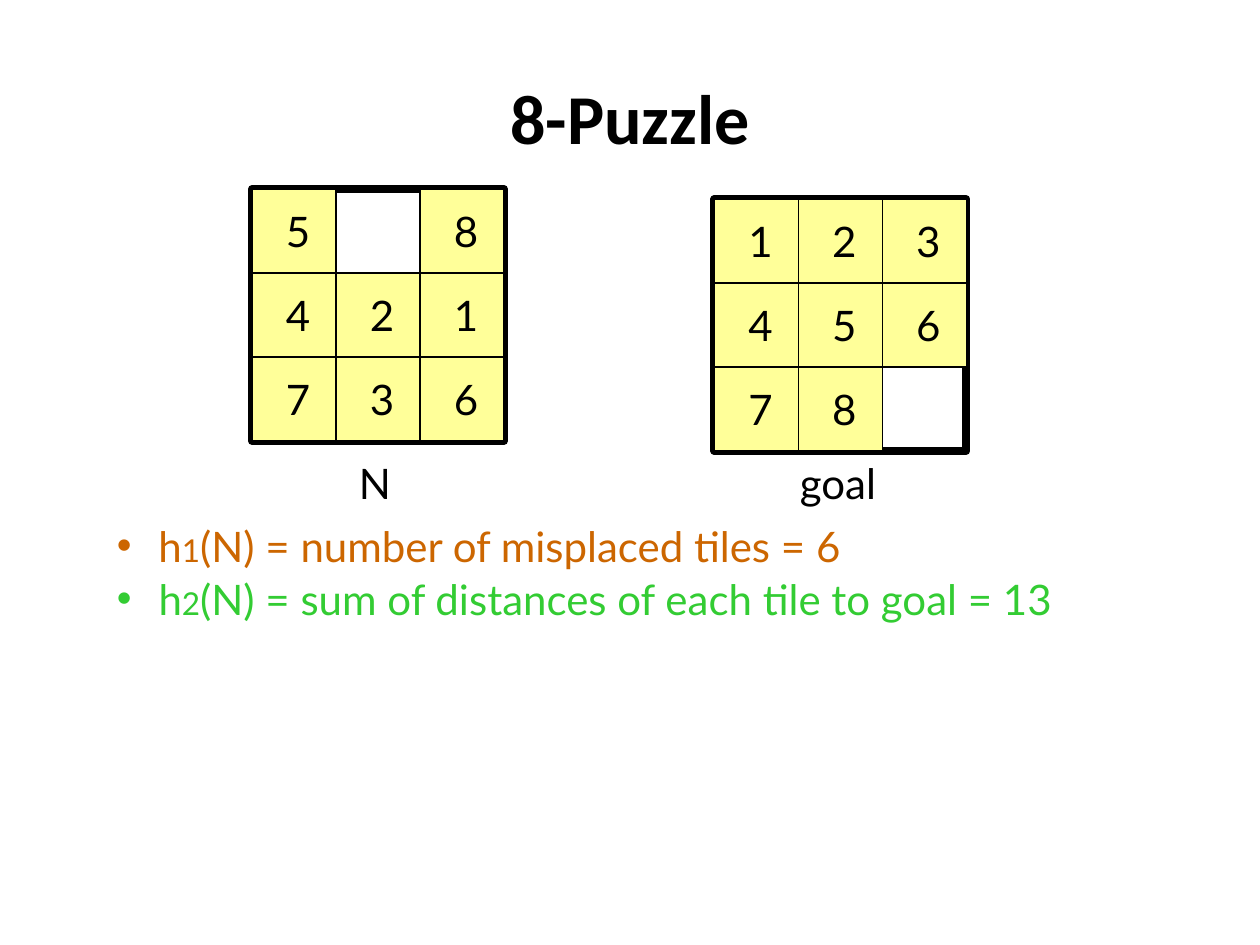
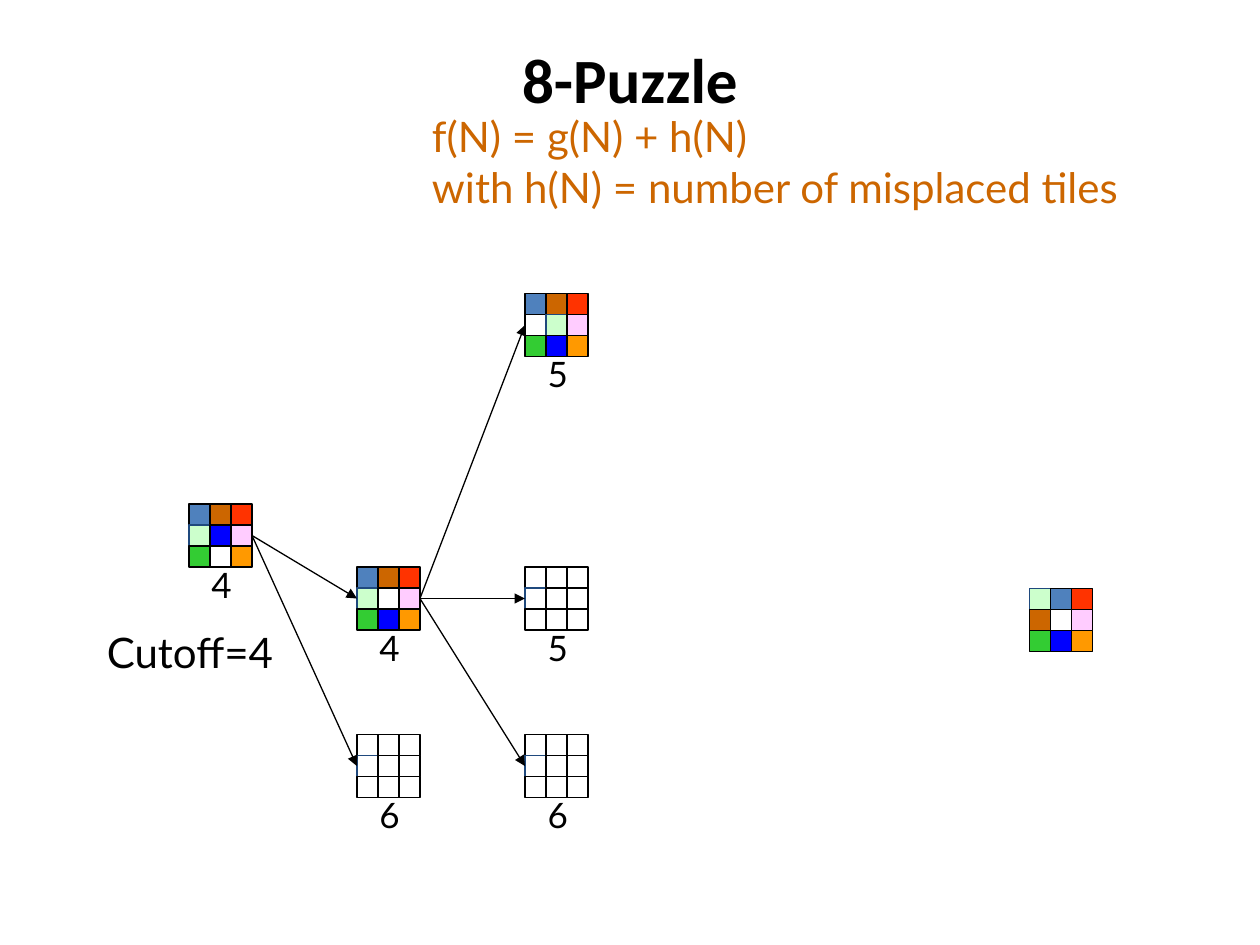
from dataclasses import dataclass

import pptx
import pptx.dml.color
import pptx.enum.dml
import pptx.enum.shapes
import pptx.enum.text
import pptx.oxml
import pptx.oxml.ns
import pptx.util

Inches = pptx.util.Inches
Pt = pptx.util.Pt
RECT = pptx.enum.shapes.MSO_SHAPE.RECTANGLE
RIGHT_SIDE, LEFT_SIDE = 3, 1


@dataclass(frozen=True)
class Theme:
    title_font: str = "Calibri"
    body_font: str = "Lato"
    ink: str = "000000"
    white: str = "FFFFFF"
    navy: str = "1F497D"
    orange: str = "CC6600"
    green: str = "33CC33"
    tile: str = "FFFF99"
    body: int = 24
    small: int = 20
    index: int = 18
    thin: float = 0.75
    thick: float = 4.5


THEME = Theme()
HIDDEN = "000x00000"  # x marks the blank cell with a navy outline
CELL_FILLS = {
    "1": "4F81BD", "2": THEME.orange, "3": "FF3300", "4": "CCFFCC",
    "5": "0000FF", "6": "FFCCFF", "7": THEME.green, "8": "FF9900",
    "0": THEME.white, "x": THEME.white,
}


def rgb(value):
    return pptx.dml.color.RGBColor.from_string(value)


def add_run(p, text, size=THEME.body, color=THEME.ink, font=THEME.body_font, bold=False):
    r = p.add_run()
    r.text = text
    r.font.size = Pt(size)
    r.font.name = font
    r.font.bold = bold
    r.font.color.rgb = rgb(color)


def add_bullet(p, indent):
    pPr = p._p.get_or_add_pPr()
    pPr.set("marL", str(indent))
    pPr.set("indent", str(-indent))
    ns = pptx.oxml.ns.nsdecls("a")
    pPr.append(pptx.oxml.parse_xml(f'<a:buFont {ns} typeface="Arial"/>'))
    pPr.append(pptx.oxml.parse_xml(f'<a:buChar {ns} char="•"/>'))


def grid(x, y, width, state):
    """Yield symbol, left, top and side of each cell of a 3 by 3 board."""
    side = width / 3
    for i, symbol in enumerate(state):
        row, col = divmod(i, 3)
        yield symbol, x + col * side, y + row * side, side


class Deck:
    def __init__(self, theme):
        self.theme = theme
        self.prs = pptx.Presentation()
        self.prs.slide_width = Inches(10)
        self.prs.slide_height = Inches(7.5)
        self.s = None

    def slide(self, title, top, size):
        self.s = self.prs.slides.add_slide(self.prs.slide_layouts[5])
        sp = self.s.shapes.title
        sp.left, sp.top = Inches(0.5), Inches(top)
        sp.width, sp.height = Inches(9), Inches(1.25)
        tf = sp.text_frame
        tf.vertical_anchor = pptx.enum.text.MSO_ANCHOR.MIDDLE
        p = tf.paragraphs[0]
        p.alignment = pptx.enum.text.PP_ALIGN.CENTER
        add_run(p, title, size=size, font=self.theme.title_font, bold=True)

    def rect(self, x, y, side, fill=None, line=THEME.ink, weight=THEME.thin, parent=None):
        sp = (parent or self.s).shapes.add_shape(
            RECT, Inches(x), Inches(y), Inches(side), Inches(side))
        sp.shadow.inherit = False
        if fill:
            sp.fill.solid()
            sp.fill.fore_color.rgb = rgb(fill)
        else:
            sp.fill.background()
        sp.line.color.rgb = rgb(line)
        sp.line.width = Pt(weight)
        return sp

    def frame(self, x, y, w, h, parent=None):
        """Add an empty text box that fits its text and return its text frame."""
        sp = (parent or self.s).shapes.add_textbox(
            Inches(x), Inches(y), Inches(w), Inches(h))
        tf = sp.text_frame
        tf.word_wrap = False
        tf.auto_size = pptx.enum.text.MSO_AUTO_SIZE.SHAPE_TO_FIT_TEXT
        return tf

    def text(self, text, x, y, w, h, parent=None, **fmt):
        tf = self.frame(x, y, w, h, parent)
        for i, line in enumerate(text.split("\n")):
            p = tf.add_paragraph() if i else tf.paragraphs[0]
            add_run(p, line, **fmt)

    def heuristic(self, index, meaning, y, w, color):
        tf = self.frame(0.83, y, w, 0.5)
        tf.word_wrap = True
        p = tf.paragraphs[0]
        add_bullet(p, Inches(0.33))
        add_run(p, "h", color=color)
        add_run(p, index, size=self.theme.index, color=color)
        add_run(p, f"(N) = {meaning}", color=color)

    def puzzle(self, x, y, state):
        """Draw a large board with numbered tiles; 0 is the empty square."""
        t = self.theme
        group = self.s.shapes.add_group_shape()
        self.rect(x, y, 2, weight=t.thick, parent=group)
        tiles = [cell for cell in grid(x, y, 2, state) if cell[0] != "0"]
        for _, left, top, side in tiles:
            self.rect(left, top, side, fill=t.tile, parent=group)
        for number, left, top, _ in tiles:
            self.text(number, left + 0.17, top + 0.08, 0.38, 0.5, parent=group)

    def node(self, x, y, state, cost=None):
        """Draw a small coloured board and return its nine cells."""
        t = self.theme
        group = self.s.shapes.add_group_shape()
        if cost:
            self.text(cost, x + 0.08, y + 0.42, 0.35, 0.43, parent=group, size=t.small)
        return [
            self.rect(left, top, side, fill=CELL_FILLS[symbol],
                      line=t.navy if symbol in "4x" else t.ink, parent=group)
            for symbol, left, top, side in grid(x, y, 0.5, state)
        ]

    def arrow(self, parent_cells, child_cells):
        """Join the right of one board's middle row to the left of another's."""
        c = self.s.shapes.add_connector(
            pptx.enum.shapes.MSO_CONNECTOR.STRAIGHT, 0, 0, 0, 0)
        c.begin_connect(parent_cells[5], RIGHT_SIDE)
        c.end_connect(child_cells[3], LEFT_SIDE)
        c.line.color.rgb = rgb(self.theme.ink)
        c.line.width = Pt(self.theme.thin)
        ns = pptx.oxml.ns.nsdecls("a")
        c.line._get_or_add_ln().append(
            pptx.oxml.parse_xml(f'<a:tailEnd {ns} type="triangle"/>'))
        c._element.spPr.append(pptx.oxml.parse_xml(f"<a:effectLst {ns}/>"))


def heuristics_slide(deck):
    t = deck.theme
    deck.slide("8-Puzzle", top=0.3, size=40)
    deck.puzzle(5.67, 1.58, "123456780")
    deck.puzzle(2, 1.5, "508421736")
    deck.text("N", 2.75, 3.58, 0.42, 0.5)
    deck.text("goal", 6.25, 3.58, 0.82, 0.5)
    deck.heuristic("1", "number of misplaced tiles = 6", 4.08, 6.17, t.orange)
    deck.heuristic("2", "sum of distances of each tile to goal = 13", 4.5, 8.08, t.green)


def search_slide(deck):
    deck.slide("8-Puzzle", top=0, size=36)
    depth_x = [1.5 + depth * 4 / 3 for depth in range(3)]
    root = deck.node(depth_x[0], 4, "123456708", "4")
    deck.node(8.17, 4.67, "413206758")
    middle = deck.node(depth_x[1], 4.5, "123406758", "4")
    deck.arrow(root, middle)
    children = [
        (root, 1, 5.83, HIDDEN, "6"),
        (middle, 2, 5.83, HIDDEN, "6"),
        (middle, 2, 4.5, HIDDEN, "5"),
        (middle, 2, 2.33, "123046758", "5"),
    ]
    for parent, depth, y, state, cost in children:
        deck.arrow(parent, deck.node(depth_x[depth], y, state, cost))
    deck.text("f(N) = g(N) + h(N)\nwith h(N) = number of misplaced tiles",
              3.33, 0.83, 5.82, 0.9, color=deck.theme.orange)
    deck.text("Cutoff=4", 0.75, 4.92, 1.52, 0.5)


def main():
    deck = Deck(THEME)
    heuristics_slide(deck)
    search_slide(deck)
    deck.prs.save("out.pptx")


if __name__ == "__main__":
    main()
